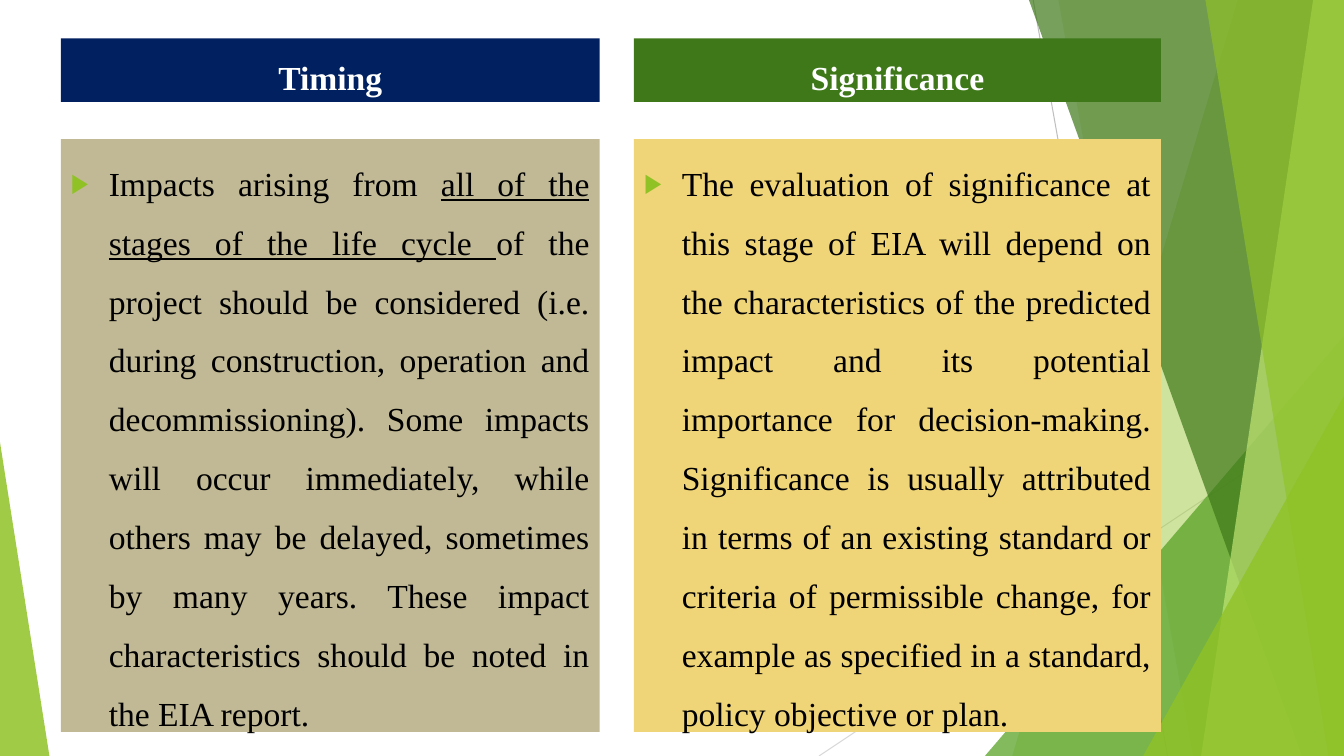
from lxml import etree
from pptx import Presentation
from pptx.dml.color import RGBColor
from pptx.enum.shapes import MSO_CONNECTOR, MSO_SHAPE
from pptx.enum.text import MSO_ANCHOR, MSO_AUTO_SIZE, PP_ALIGN
from pptx.oxml.ns import qn
from pptx.util import Pt

STRAIGHT = MSO_CONNECTOR.STRAIGHT
TRIANGLE = MSO_SHAPE.ISOSCELES_TRIANGLE
TOP, BOTTOM = MSO_ANCHOR.TOP, MSO_ANCHOR.BOTTOM
CENTER, JUSTIFY = PP_ALIGN.CENTER, PP_ALIGN.JUSTIFY
NO_AUTOFIT = MSO_AUTO_SIZE.NONE

WIDTH, HEIGHT = 960, 540
COMPARISON_LAYOUT = 4
LIME = "90C226"

RAYS = [((738, 0), (834, HEIGHT), "BFBFBF"),
        ((WIDTH, 290), (585, HEIGHT), "D9D9D9")]
BACK_PANES = [(884, 723, LIME, 30), (756, 852, LIME, 20)]
FRONT_PANES = [(735, 929.5, "3F7819", 70), (938, 858, "C0E474", 70),
               (861, 949, LIME, 65)]

HEADING_TOP, HEADING_HEIGHT = 27.4, 45.4
BODY_TOP, BODY_HEIGHT = 99.4, 423.4
COLUMNS = [
    (43.5, 384.8, "Timing", "002060", "C1B995", [
        ("Impacts arising from ", False),
        ("all of the stages of the life cycle ", True),
        ("of the project should be considered (i.e. during construction, "
         "operation and decommissioning). Some impacts will occur "
         "immediately, while others may be delayed, sometimes by many years. "
         "These impact characteristics should be noted in the EIA report.",
         False)]),
    (452.8, 376.5, "Significance", "3F7819", "F0D578", [
        ("The evaluation of significance at this stage of EIA will depend on "
         "the characteristics of the predicted impact and its potential "
         "importance for decision-making. Significance is usually attributed "
         "in terms of an existing standard or criteria of permissible change, "
         "for example as specified in a standard, policy objective or plan.",
         False)]),
]


def rgb(code):
    return RGBColor.from_string(code)


class SlideBuilder:
    font_name = "Times New Roman"
    font_size = 24
    bullet_indent = 27

    def __init__(self, slide):
        self.slide = slide
        self.shapes = slide.shapes

    def ray(self, start, end, color):
        ray = self.shapes.add_connector(
            STRAIGHT, *(Pt(value) for value in start + end))
        ray.line.color.rgb = rgb(color)
        ray.line.width = Pt(0.75)
        etree.SubElement(ray.line._ln.getparent(), qn("a:effectLst"))

    def tint(self, shape, color, opacity):
        shape.shadow.inherit = False
        shape.fill.solid()
        shape.fill.fore_color.rgb = rgb(color)
        shape.line.fill.background()
        color_node = shape.element.spPr.find(
            qn("a:solidFill")).find(qn("a:srgbClr"))
        etree.SubElement(color_node, qn("a:alpha"), val=str(opacity * 1000))

    def pane(self, top_x, bottom_x, color, opacity):
        outline = self.shapes.build_freeform(top_x, 0, scale=Pt(1))
        outline.add_line_segments(
            [(WIDTH, 0), (WIDTH, HEIGHT), (bottom_x, HEIGHT)], close=True)
        self.tint(outline.convert_to_shape(), color, opacity)

    def corner(self, left, top, width, apex, color, opacity):
        corner = self.shapes.add_shape(
            TRIANGLE, Pt(left), Pt(top), Pt(width), Pt(HEIGHT - top))
        corner.adjustments[0] = apex
        self.tint(corner, color, opacity)

    def box(self, index, left, top, width, height, fill, anchor):
        box = self.slide.placeholders[index]
        box.left, box.top = Pt(left), Pt(top)
        box.width, box.height = Pt(width), Pt(height)
        box.fill.solid()
        box.fill.fore_color.rgb = rgb(fill)
        box.text_frame.auto_size = NO_AUTOFIT
        box.text_frame.word_wrap = True
        box.text_frame.vertical_anchor = anchor
        self.shapes.element.append(box.element)
        paragraph = box.text_frame.paragraphs[0]
        paragraph.space_before = Pt(10)
        return paragraph

    def style(self, run, color, bold=False, underline=False):
        run.font.name = self.font_name
        run.font.size = Pt(self.font_size)
        run.font.color.rgb = rgb(color)
        run.font.bold = bold
        run.font.underline = underline

    def heading(self, index, left, width, text, fill):
        heading = self.box(index, left, HEADING_TOP, width, HEADING_HEIGHT,
                           fill, BOTTOM)
        heading.text = text
        heading.alignment = CENTER
        self.style(heading.runs[0], "FFFFFF", bold=True)

    def body(self, index, left, width, passages, fill):
        body = self.box(index, left, BODY_TOP, width, BODY_HEIGHT, fill, TOP)
        body.alignment = JUSTIFY
        body.line_spacing = 1.46
        self.bullet(body)
        for text, underlined in passages:
            run = body.add_run()
            run.text = text
            self.style(run, "000000", underline=underlined)

    def bullet(self, paragraph):
        properties = paragraph._p.get_or_add_pPr()
        properties.set("marL", str(Pt(self.bullet_indent)))
        properties.set("indent", str(-Pt(self.bullet_indent)))
        bullet_color = etree.SubElement(properties, qn("a:buClr"))
        etree.SubElement(bullet_color, qn("a:srgbClr"), val=LIME)
        etree.SubElement(properties, qn("a:buSzPct"), val="80000")
        etree.SubElement(properties, qn("a:buChar"), char="▶")


def main():
    deck = Presentation()
    deck.slide_width, deck.slide_height = Pt(WIDTH), Pt(HEIGHT)
    slide = deck.slides.add_slide(deck.slide_layouts[COMPARISON_LAYOUT])
    title = slide.shapes.title.element
    title.getparent().remove(title)
    builder = SlideBuilder(slide)

    for ray in RAYS:
        builder.ray(*ray)
    for pane in BACK_PANES:
        builder.pane(*pane)
    builder.corner(703.5, 240, 256.5, 1, "54A021", 72)
    for pane in FRONT_PANES:
        builder.pane(*pane)
    builder.corner(816.5, 283, 143.5, 1, LIME, 80)
    builder.corner(0, 316, 35.3, 0, LIME, 85)

    for number, column in enumerate(COLUMNS):
        left, width, name, heading_fill, body_fill, passages = column
        index = 1 + 2 * number
        builder.heading(index, left, width, name, heading_fill)
        builder.body(index + 1, left, width, passages, body_fill)

    deck.save("out.pptx")


if __name__ == "__main__":
    main()
